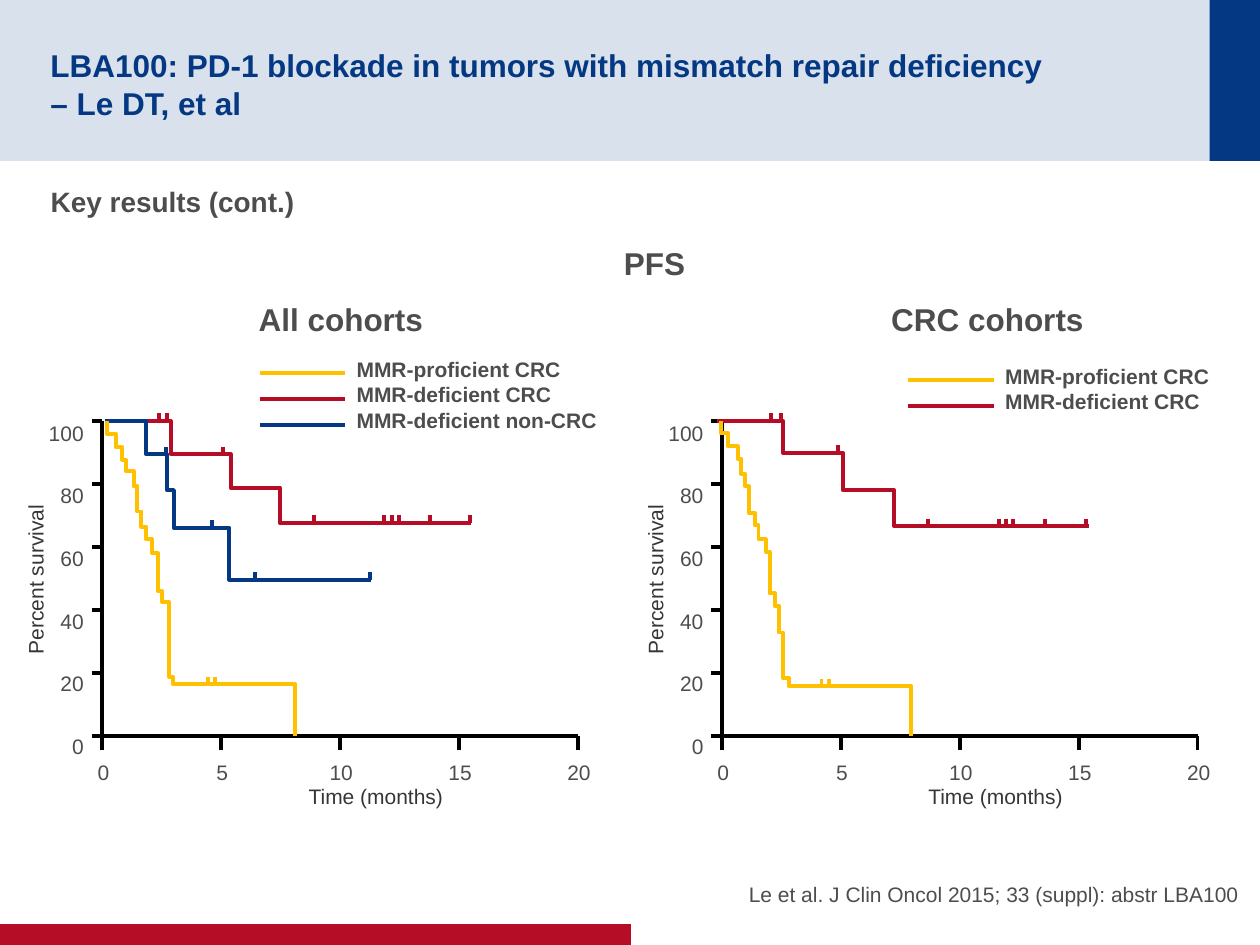
from lxml.etree import SubElement
from pptx import Presentation
from pptx.dml.color import RGBColor
from pptx.enum.shapes import MSO_CONNECTOR, MSO_SHAPE
from pptx.enum.text import MSO_ANCHOR, PP_ALIGN
from pptx.oxml.ns import qn
from pptx.util import Pt

NAVY, RED, YELLOW = "043882", "B60D27", "FFC000"
GREY, DARK, BLACK, PALE = "4D4D4D", "363636", "000000", "D9E1EC"
MAX_MONTH, MAX_PERCENT = 20, 100

# Each curve: colour, steps of (month, percent from then on), censoring months
ALL_COHORTS = [
    (RED, [(0.1, 100), (2.88, 89.4), (5.4, 78.8), (7.47, 67.6), (15.5, 67.6)],
     [2.38, 2.74, 5.09, 8.9, 11.87, 12.19, 12.47, 13.77, 15.47]),
    (NAVY, [(0.1, 100), (1.85, 89.4), (2.72, 78), (3.02, 66), (5.35, 49.6),
            (11.3, 49.6)],
     [2.7, 4.61, 6.41, 11.27]),
    (YELLOW, [(0.21, 100), (0.21, 95.8), (0.58, 91.6), (0.85, 87.6), (1.01, 84),
              (1.32, 79.2), (1.48, 71.2), (1.64, 66.4), (1.85, 62.4), (2.1, 58),
              (2.33, 46), (2.51, 42.4), (2.81, 18.8), (2.97, 16.4), (8.11, 0)],
     [4.45, 4.75]),
]
CRC_COHORTS = [
    (RED, [(-0.21, 100), (2.57, 89.8), (5.09, 78), (7.24, 66.6), (15.42, 66.6)],
     [2.07, 2.49, 4.87, 8.67, 11.66, 11.94, 12.24, 13.58, 15.31]),
    (YELLOW, [(-0.05, 100), (-0.05, 96), (0.26, 92), (0.66, 88), (0.81, 83.2),
              (0.97, 79.2), (1.13, 70.8), (1.38, 66.8), (1.54, 62.4),
              (1.85, 58.4), (2.01, 45.2), (2.23, 41.2), (2.4, 32.8),
              (2.57, 18.4), (2.81, 15.8), (7.95, 0)],
     [4.19, 4.5]),
]
LEGEND = [("MMR-proficient CRC", YELLOW), ("MMR-deficient CRC", RED),
          ("MMR-deficient non-CRC", NAVY)]


def colour(value):
    return RGBColor.from_string(value)


def set_all(target, values):
    for name, value in values.items():
        setattr(target, name, value)


def write(shape, text, size=12, ink=GREY, bold=False, align=PP_ALIGN.LEFT,
          spacing=None, anchor=MSO_ANCHOR.TOP, margins=(7.2, 3.6, 7.2, 3.6)):
    frame = shape.text_frame
    frame.text = text
    left, top, right, bottom = map(Pt, margins)
    set_all(frame, {"word_wrap": True, "vertical_anchor": anchor,
                    "margin_left": left, "margin_top": top,
                    "margin_right": right, "margin_bottom": bottom})
    for para in frame.paragraphs:
        set_all(para, {"alignment": align, "line_spacing": spacing})
        for span in para.runs:
            set_all(span.font, {"name": "Arial", "size": Pt(size), "bold": bold})
            span.font.color.rgb = colour(ink)


def add_text(page, box, text, **style):
    shape = page.shapes.add_textbox(*map(Pt, box))
    write(shape, text, **style)
    return shape


def add_block(page, box, ink):
    block = page.shapes.add_shape(MSO_SHAPE.RECTANGLE, *map(Pt, box))
    block.shadow.inherit = False
    block.fill.solid()
    block.fill.fore_color.rgb = colour(ink)
    block.line.fill.background()


def draw_line(page, start, end, ink=BLACK):
    line = page.shapes.add_connector(MSO_CONNECTOR.STRAIGHT,
                                     *map(Pt, (*start, *end)))
    line.line.width = Pt(2.25)
    line.line.color.rgb = colour(ink)
    SubElement(line._element.spPr, qn("a:effectLst"))


def draw_path(page, points, ink=BLACK):
    corners = [(Pt(x), Pt(y)) for x, y in points]
    builder = page.shapes.build_freeform(*corners[0])
    builder.add_line_segments(corners[1:], close=False)
    outline = builder.convert_to_shape()
    outline.shadow.inherit = False
    outline.fill.background()
    outline.line.width = Pt(2.25)
    outline.line.color.rgb = colour(ink)


def add_axes(page, box):
    left, top, width, height = box
    bottom = top + height
    draw_path(page, [(left, top), (left, bottom), (left + width, bottom)])

    # Percent axis
    percents = range(MAX_PERCENT, -1, -20)
    for percent in percents:
        y = bottom - height * percent / MAX_PERCENT
        draw_line(page, (left - 6, y), (left, y))
    add_text(page, (left - 38, top - 25.3, 34.5, 222), "\n".join(map(str, percents)),
             align=PP_ALIGN.RIGHT, spacing=Pt(35.8))
    name = add_text(page, (left - 91.5, top + 78.7, 109, 24), "Percent survival",
                    ink=DARK, align=PP_ALIGN.CENTER)
    name.rotation = 270

    # Month axis
    for month in range(0, MAX_MONTH + 1, 5):
        x = left + width * month / MAX_MONTH
        draw_line(page, (x, bottom), (x, bottom + 8))
        add_text(page, (x - 14.5, bottom - 8, 30.4, 37.5), str(month),
                 align=PP_ALIGN.CENTER, spacing=Pt(32.5))
    add_text(page, (left + width / 2 - 29, bottom + 23.6, 99, 24), "Time (months)",
             ink=DARK, align=PP_ALIGN.CENTER)


def add_curve(page, box, ink, steps, censored):
    left, top, width, height = box

    def place(month, percent):
        return (left + width * month / MAX_MONTH,
                top + height * (1 - percent / MAX_PERCENT))

    points = [place(*steps[0])]
    for (_, before), (month, after) in zip(steps, steps[1:]):
        points.append(place(month, before))
        if after != before:
            points.append(place(month, after))
    draw_path(page, points, ink)

    # Censoring ticks
    for month in censored:
        level = [percent for start, percent in steps if start <= month][-1]
        x, y = place(month, level)
        draw_line(page, (x, y - 4.3), (x, y), ink)


def add_legend(page, box, entries):
    left, top, width, height = box
    add_text(page, (left + 48.3, top, width - 48.3, height),
             "\n".join(label for label, _ in entries), bold=True, spacing=Pt(14.5))
    for index, (_, ink) in enumerate(entries):
        y = top + 13 + 15 * index
        draw_line(page, (left, y), (left + 49, y), ink)


def add_panel(page, box, heading, heading_box, curves, legend_box):
    add_axes(page, box)
    for curve in curves:
        add_curve(page, box, *curve)
    add_legend(page, legend_box, LEGEND[:len(curves)])
    add_text(page, heading_box, heading, size=18, bold=True, align=PP_ALIGN.CENTER)


def add_frame(page):
    # Header band, corner block and footer bar
    add_block(page, (0, 0, 720, 92), PALE)
    add_block(page, (691.2, 0, 28.8, 92), NAVY)
    add_block(page, (0, 528, 360.5, 12), RED)

    # Title, raised above the header band
    title = page.shapes.title
    page.shapes._spTree.append(title._element)
    set_all(title, {"left": Pt(28.8), "top": Pt(14.4),
                    "width": Pt(648.7), "height": Pt(63.4)})
    write(title, "LBA100: PD-1 blockade in tumors with mismatch repair deficiency"
          "\v– Le DT, et al", size=18, ink=NAVY, bold=True, spacing=Pt(21.7),
          anchor=MSO_ANCHOR.MIDDLE, margins=(0, 3.6, 0, 0))

    # Subheading and citation
    add_text(page, (29, 102.2, 661.7, 278.6), "Key results (cont.)",
             size=16, bold=True, margins=(0, 3.6, 7.2, 3.6))
    add_text(page, (366, 480.2, 342, 38.2),
             "Le et al. J Clin Oncol 2015; 33 (suppl): abstr LBA100",
             align=PP_ALIGN.RIGHT, anchor=MSO_ANCHOR.BOTTOM, margins=(0, 0, 0, 0))


def main():
    deck = Presentation()
    set_all(deck, {"slide_width": Pt(720), "slide_height": Pt(540)})
    page = deck.slides.add_slide(deck.slide_layouts[5])
    add_frame(page)
    add_text(page, (347, 136, 54, 31.7), "PFS", size=18, bold=True,
             align=PP_ALIGN.CENTER)
    add_panel(page, (58.4, 240.5, 271.8, 180), "All cohorts",
              (135.4, 168.1, 118.8, 31.7), ALL_COHORTS, (148.4, 200, 214, 55.4))
    add_panel(page, (412.5, 240.5, 271.8, 180), "CRC cohorts",
              (496.2, 168.1, 136.1, 31.7), CRC_COHORTS, (519, 204.1, 191.5, 39.6))
    deck.save("out.pptx")


if __name__ == "__main__":
    main()
